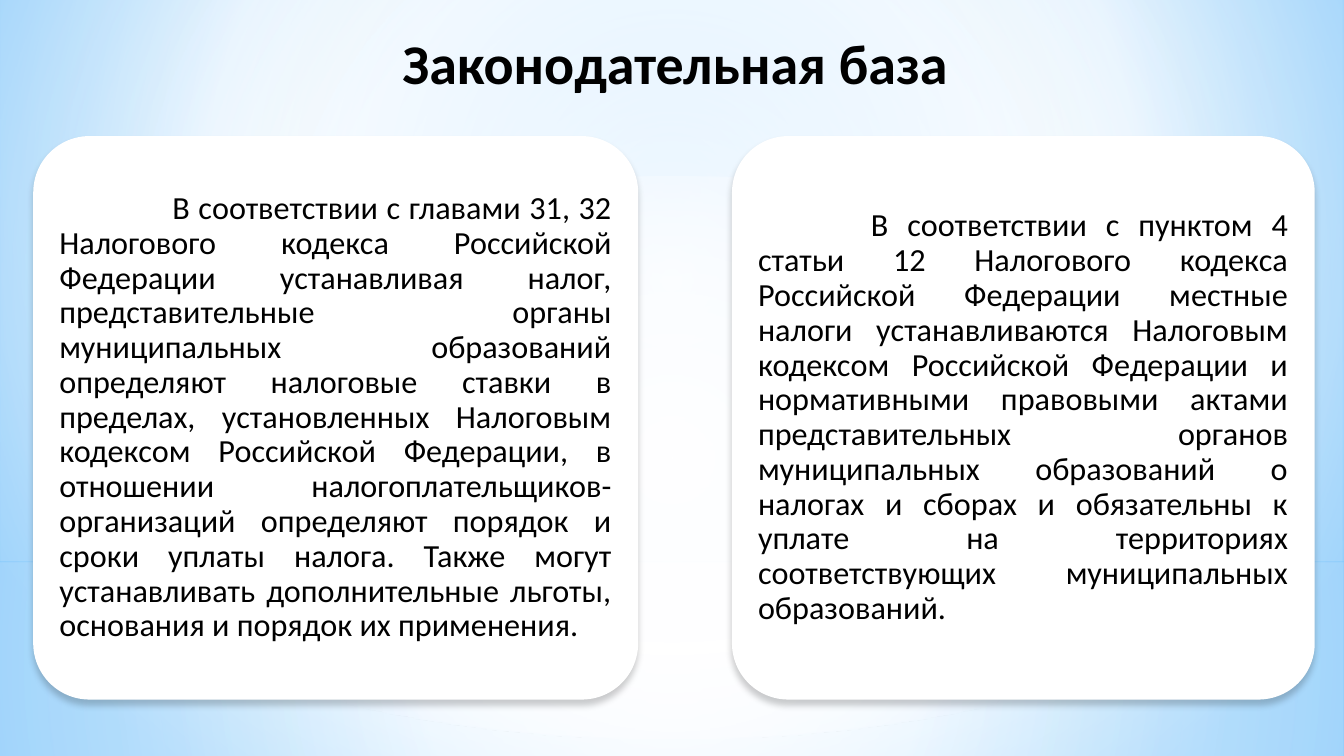
import pptx
import pptx.util
import pptx.dml.color
import pptx.enum.shapes
import pptx.enum.text
import pptx.oxml
import pptx.oxml.ns
import lxml.etree

Inches, Pt = pptx.util.Inches, pptx.util.Pt
RGB = pptx.dml.color.RGBColor
SHAPE = pptx.enum.shapes.MSO_SHAPE
ALIGN = pptx.enum.text.PP_ALIGN
ANCHOR = pptx.enum.text.MSO_ANCHOR

WIDTH, HEIGHT = 13.33, 7.5
WHITE = RGB(0xFF, 0xFF, 0xFF)
BLACK = RGB(0, 0, 0)
HAZE = RGB(0xB4, 0xDC, 0xFA)
SKY = RGB(0x9E, 0xD5, 0xFF)
DEEP_SKY = RGB(0x5B, 0xB9, 0xFF)
FONT = "Calibri"
CARD_TOP, CARD_HEIGHT, CARD_PADDING = 1.35, 5.59, 0.16
CENTRE = (50, 50, 50, 50)

TITLE = "Законодательная база"
CHAPTERS_LAW = (
    "В соответствии с главами 31, 32 Налогового кодекса Российской Федерации "
    "устанавливая налог, представительные органы муниципальных образований "
    "определяют налоговые ставки в пределах, установленных Налоговым кодексом "
    "Российской Федерации, в отношении налогоплательщиков-организаций определяют "
    "порядок и сроки уплаты налога. Также могут устанавливать дополнительные "
    "льготы, основания и порядок их применения.")
LOCAL_TAX_LAW = (
    "В соответствии с пунктом 4 статьи 12 Налогового кодекса Российской Федерации "
    "местные налоги устанавливаются Налоговым кодексом Российской Федерации и "
    "нормативными правовыми актами представительных органов муниципальных "
    "образований о налогах и сборах и обязательны к уплате на территориях "
    "соответствующих муниципальных образований.")


def paint_gradient(fill, owner, stops, focus=None):
    """Stops are (position %, colour, opacity %); without a focus it runs downwards."""
    fill.gradient()
    plain = owner.find(".//" + pptx.oxml.ns.qn("a:gradFill"))
    marks = "".join(
        f'<a:gs pos="{pos * 1000}"><a:srgbClr val="{colour}">'
        f'<a:alpha val="{opacity * 1000}"/></a:srgbClr></a:gs>'
        for pos, colour, opacity in stops)
    if focus:
        sides = " ".join(f'{side}="{share * 1000}"' for side, share in zip("ltrb", focus))
        course = f'<a:path path="circle"><a:fillToRect {sides}/></a:path>'
    else:
        course = '<a:lin ang="5400000" scaled="0"/>'
    graded = pptx.oxml.parse_xml(
        f'<a:gradFill {pptx.oxml.ns.nsdecls("a")} rotWithShape="1">'
        f'<a:gsLst>{marks}</a:gsLst>{course}</a:gradFill>')
    plain.getparent().replace(plain, graded)


def add_panel(slide, kind, box):
    panel = slide.shapes.add_shape(kind, *map(Inches, box))
    panel.shadow.inherit = False
    panel.line.fill.background()
    return panel


def add_words(slide, box, words, size, align, bold=False):
    frame = slide.shapes.add_textbox(*map(Inches, box)).text_frame
    frame.word_wrap = True
    frame.vertical_anchor = ANCHOR.MIDDLE
    paragraph = frame.paragraphs[0]
    paragraph.alignment = align
    run = paragraph.add_run()
    run.text = words
    run.font.name, run.font.size, run.font.bold = FONT, Pt(size), bold
    run.font.color.rgb = BLACK
    return frame, paragraph


def add_backdrop(slide, width, height):
    paint_gradient(slide.background.fill, slide.element,
                   [(0, SKY, 100), (60, WHITE, 100), (100, DEEP_SKY, 100)],
                   (20, 10, 20, 60))
    horizon = 0.744 * height
    layers = [
        (SHAPE.RECTANGLE, horizon, height - horizon,
         [(0, WHITE, 91), (37, WHITE, 76), (100, HAZE, 79)], CENTRE),
        (SHAPE.RECTANGLE, 0, horizon,
         [(0, WHITE, 89), (48, WHITE, 62), (100, HAZE, 79)], CENTRE),
        (SHAPE.RECTANGLE, 0.55 * height, height / 3,
         [(0, WHITE, 0), (29, WHITE, 30), (45, HAZE, 40),
          (55, WHITE, 26), (65, HAZE, 60), (100, WHITE, 0)], None),
        (SHAPE.OVAL, 0.233 * height, horizon,
         [(0, WHITE, 100), (56, WHITE, 0)], CENTRE),
    ]
    for kind, top, depth, stops, focus in layers:
        layer = add_panel(slide, kind, (0, top, width, depth))
        paint_gradient(layer.fill, layer.element, stops, focus)


def add_law_card(slide, box, law):
    left, top, width, height = box
    # White rounded card with a soft shadow below
    card = add_panel(slide, SHAPE.ROUNDED_RECTANGLE, box)
    card.adjustments[0] = 0.1
    card.fill.solid()
    card.fill.fore_color.rgb = WHITE
    effects = card.element.spPr.find(pptx.oxml.ns.qn("a:effectLst"))
    effects.append(pptx.oxml.parse_xml(
        f'<a:outerShdw {pptx.oxml.ns.nsdecls("a")} blurRad="{Pt(5)}" dist="{Pt(4)}" '
        'dir="5400000" rotWithShape="0"><a:srgbClr val="000000">'
        '<a:alpha val="20000"/></a:srgbClr></a:outerShdw>'))

    # Justified wording with a first-line indent
    inner = (left + CARD_PADDING, top + CARD_PADDING,
             width - 2 * CARD_PADDING, height - 2 * CARD_PADDING)
    frame, paragraph = add_words(slide, inner, law, 23, ALIGN.JUSTIFY)
    frame.margin_left = frame.margin_right = Inches(0.1)
    frame.margin_top = frame.margin_bottom = Inches(0.1)
    paragraph.line_spacing = 0.9
    paragraph._p.get_or_add_pPr().set("indent", str(Inches(1.12)))


def main():
    deck = pptx.Presentation()
    deck.slide_width, deck.slide_height = Inches(WIDTH), Inches(HEIGHT)
    slide = deck.slides.add_slide(deck.slide_layouts[6])

    add_backdrop(slide, WIDTH, HEIGHT)
    for left, width, law in [(0.33, 6, CHAPTERS_LAW), (7.26, 5.78, LOCAL_TAX_LAW)]:
        add_law_card(slide, (left, CARD_TOP, width, CARD_HEIGHT), law)
    add_words(slide, (0.72, 0.23, 11.95, 0.77), TITLE, 40, ALIGN.CENTER, bold=True)

    deck.save("out.pptx")


if __name__ == "__main__":
    main()
